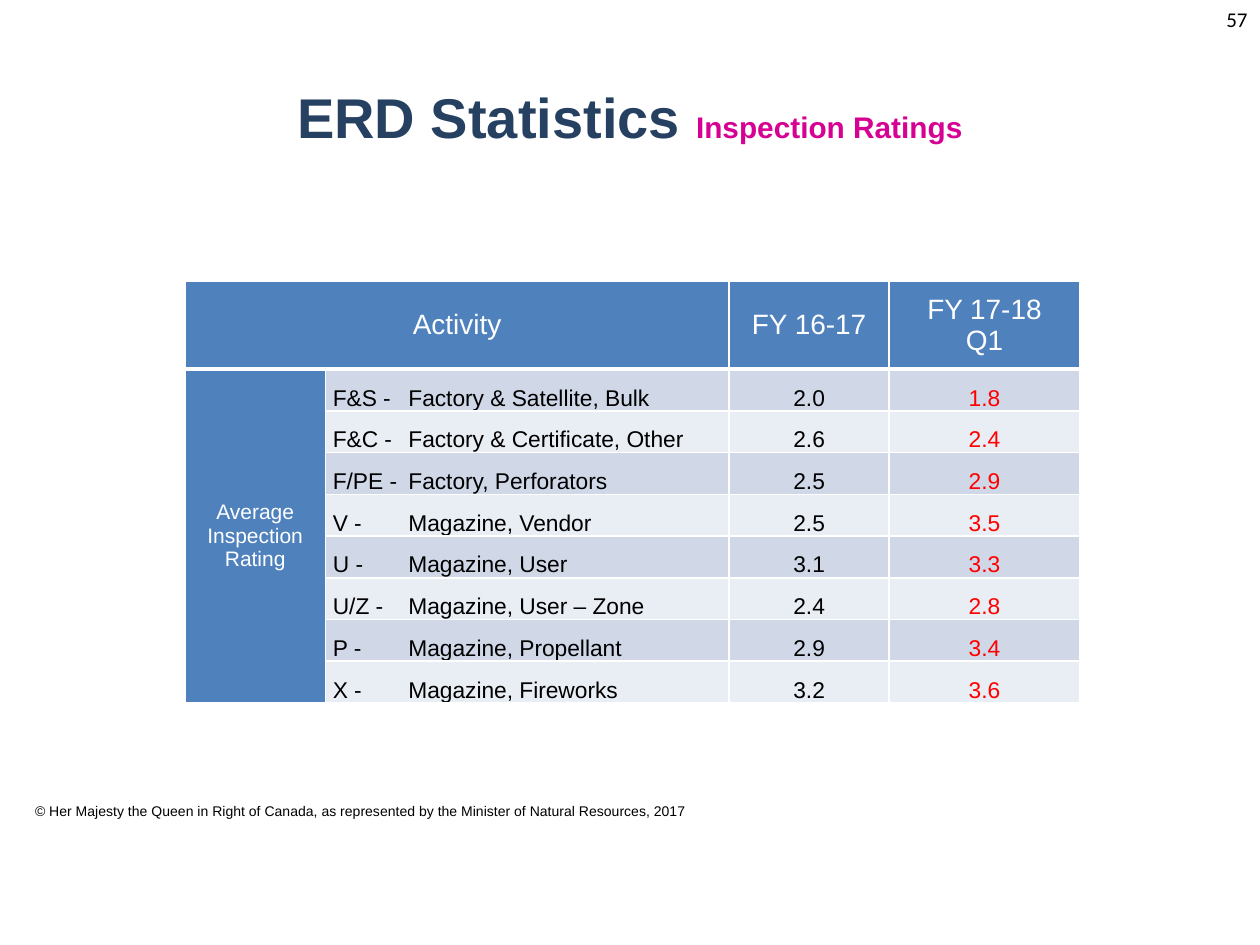
from lxml.etree import SubElement
from pptx import Presentation
from pptx.dml.color import RGBColor
from pptx.enum.text import MSO_ANCHOR as Anchor, PP_ALIGN as Align
from pptx.oxml.ns import qn
from pptx.util import Inches, Pt

COLORS = {
    "navy": "254061", "magenta": "D60093", "black": "000000", "white": "FFFFFF",
    "red": "FF0000", "header": "4F81BD", "band_dark": "D0D8E8", "band_light": "E9EDF4",
}
HEADERS = ["Activity", None, "FY 16-17", "FY 17-18\nQ1"]
RATINGS = [
    ("F&S -", "Factory & Satellite, Bulk", "2.0", "1.8"),
    ("F&C -", "Factory & Certificate, Other", "2.6", "2.4"),
    ("F/PE -", "Factory, Perforators", "2.5", "2.9"),
    ("V -", "Magazine, Vendor", "2.5", "3.5"),
    ("U -", "Magazine, User", "3.1", "3.3"),
    ("U/Z -", "Magazine, User – Zone", "2.4", "2.8"),
    ("P -", "Magazine, Propellant", "2.9", "3.4"),
    ("X -", "Magazine, Fireworks", "3.2", "3.6"),
]
COLUMN_WIDTHS = [1.11, 3.2, 1.27, 1.51]
HEADER_HEIGHT = 0.7


def apply_format(target, values):
    for name, value in values.items():
        setattr(target, name, value)


def add_span(para, text, size, color, font="Arial", bold=False):
    span = para.add_run()
    span.text = text
    apply_format(span.font, {"name": font, "size": Pt(size), "bold": bold})
    span.font.color.rgb = RGBColor.from_string(COLORS[color])


def add_text(page, area, spans, align=Align.LEFT, anchor=Anchor.TOP):
    box = page.shapes.add_textbox(*map(Inches, area))
    apply_format(box.text_frame, {"word_wrap": True, "vertical_anchor": anchor})
    para = box.text_frame.paragraphs[0]
    para.alignment = align
    for span in spans:
        add_span(para, **span)


def add_tab_stop(para, position):
    stops = SubElement(para._p.get_or_add_pPr(), qn("a:tabLst"))
    SubElement(stops, qn("a:tab"), pos=str(Inches(position)), algn="l")


def add_borders(cell, bottom):
    properties = cell._tc.get_or_add_tcPr()
    for side, width in {"L": 1, "R": 1, "T": 1, "B": bottom}.items():
        line = SubElement(properties, qn(f"a:ln{side}"), w=str(Pt(width)))
        fill = SubElement(line, qn("a:solidFill"))
        SubElement(fill, qn("a:srgbClr"), val=COLORS["white"])


def style_cell(cell, fill, anchor, bottom=1):
    add_borders(cell, bottom)
    cell.fill.solid()
    cell.fill.fore_color.rgb = RGBColor.from_string(COLORS[fill])
    apply_format(cell, {
        "vertical_anchor": anchor, "margin_left": Inches(0.06),
        "margin_right": Inches(0.06), "margin_top": 0, "margin_bottom": 0,
    })


def fill_cell(cell, text, size, color, align=Align.CENTER, tab=None):
    for index, line in enumerate(text.split("\n")):
        frame = cell.text_frame
        para = frame.add_paragraph() if index else frame.paragraphs[0]
        para.alignment = align
        if tab:
            add_tab_stop(para, tab)
        add_span(para, line, size, color)


def add_ratings_table(page, left, top, width, height):
    row_count = len(RATINGS) + 1
    frame = page.shapes.add_table(row_count, len(COLUMN_WIDTHS),
                                  *map(Inches, (left, top, width, height)))
    table = frame.table
    for column, share in zip(table.columns, COLUMN_WIDTHS):
        column.width = Inches(width * share / sum(COLUMN_WIDTHS))
    for index, row in enumerate(table.rows):
        row.height = Inches((height - HEADER_HEIGHT) / len(RATINGS) if index else HEADER_HEIGHT)

    for column, text in enumerate(HEADERS):
        cell = table.cell(0, column)
        style_cell(cell, "header", Anchor.MIDDLE, bottom=3)
        if text:
            fill_cell(cell, text, 16, "white")
    for row, (code, activity, previous, current) in enumerate(RATINGS, 1):
        band = "band_dark" if row % 2 else "band_light"
        style_cell(table.cell(row, 0), "header", Anchor.MIDDLE)
        for column in range(1, len(COLUMN_WIDTHS)):
            style_cell(table.cell(row, column), band, Anchor.BOTTOM)
        fill_cell(table.cell(row, 1), f"{code}\t{activity}", 13, "black", Align.LEFT, 0.6)
        fill_cell(table.cell(row, 2), previous, 13, "black")
        fill_cell(table.cell(row, 3), current, 13, "red")
    fill_cell(table.cell(1, 0), "Average Inspection Rating", 12, "white")
    table.cell(0, 0).merge(table.cell(0, 1))
    table.cell(1, 0).merge(table.cell(row_count - 1, 0))


def add_title(page, area):
    add_text(page, area, [
        {"text": "ERD Statistics ", "size": 32, "color": "navy", "bold": True},
        {"text": "Inspection Ratings", "size": 17, "color": "magenta", "bold": True},
    ], Align.CENTER, Anchor.MIDDLE)


def add_copyright(page, area):
    add_text(page, area, [{
        "text": "© Her Majesty the Queen in Right of Canada, as represented by "
                "the Minister of Natural Resources, 2017",
        "size": 8, "color": "black",
    }])


def add_page_number(page, area):
    add_text(page, area, [{"text": "57", "size": 12, "color": "black", "font": "Calibri"}],
             Align.RIGHT)


def main():
    deck = Presentation()
    apply_format(deck, {"slide_width": Inches(10), "slide_height": Inches(7.5)})
    page = deck.slides.add_slide(deck.slide_layouts[6])
    add_copyright(page, (0.18, 6.32, 5.44, 0.37))
    add_title(page, (0, 0.3, 10, 1.25))
    add_ratings_table(page, 1.47, 2.23, 7.1, 3.35)
    add_page_number(page, (9.02, 0, 0.98, 0.52))
    deck.save("out.pptx")


if __name__ == "__main__":
    main()
